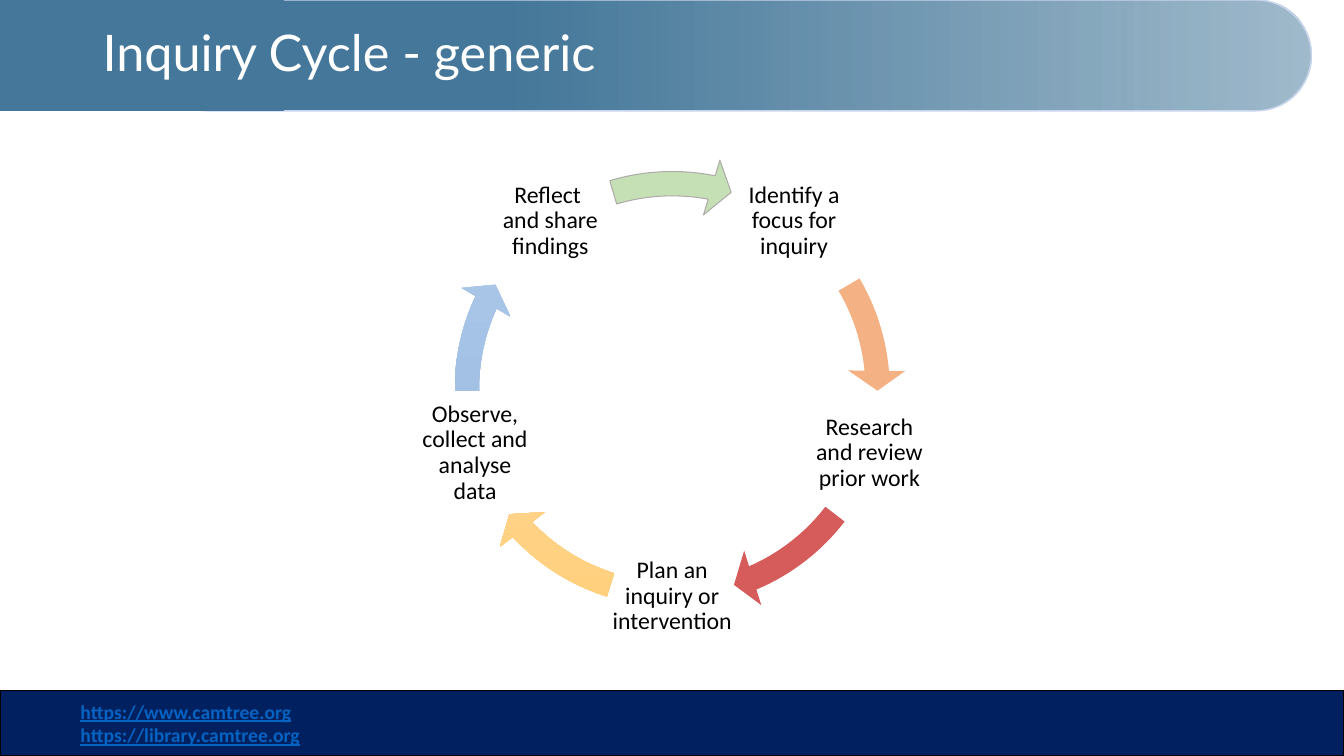
"""Build the generic inquiry cycle slide."""
from dataclasses import dataclass
from math import cos, radians, sin

from lxml.etree import SubElement
from pptx import Presentation
from pptx.dml.color import RGBColor
from pptx.enum.shapes import MSO_SHAPE
from pptx.enum.text import MSO_ANCHOR, PP_ALIGN
from pptx.oxml.ns import qn
from pptx.shapes.autoshape import Shape
from pptx.slide import Slide
from pptx.util import Pt

COLORS = {
    "banner": "447799",
    "banner_edge": "C7D5ED",
    "footer": "002060",
    "link": "0563C1",
    "black": "000000",
    "white": "FFFFFF",
    "orange": "F4B183",
    "red": "C00000",
    "yellow_top": "FFDB9E",
    "yellow_middle": "FFD590",
    "yellow_bottom": "FFD07C",
    "blue_top": "B1CBE9",
    "blue_middle": "A3C1E5",
    "blue_bottom": "93B9E4",
    "green": "C5E0B4",
    "green_edge": "AFABAB",
}
CENTER_X, CENTER_Y = 480.2, 277.9
STEP_RADIUS, STEP_SIZE, RING_SIZE = 148.1, 89.3, 334.1
FIRST_STEP_ANGLE = -54


@dataclass(frozen=True)
class Stop:
    position: int
    color: str
    opacity: int = 100


@dataclass(frozen=True)
class Step:
    label: str
    arrow_start: float
    arrow_end: float
    stops: tuple[Stop, ...]
    edge: str = ""


STEPS = (
    Step("Identify a focus for inquiry", 329.44, 354.88, (Stop(0, "orange"),)),
    Step("Research and review prior work", 37.56, 66.91, (Stop(0, "red", 64),)),
    Step("Plan an inquiry or intervention", 107.49, 136.84,
         (Stop(0, "yellow_top"), Stop(50, "yellow_middle"), Stop(100, "yellow_bottom"))),
    Step("Observe, collect and analyse data", 179.52, 204.96,
         (Stop(0, "blue_top"), Stop(50, "blue_middle"), Stop(100, "blue_bottom"))),
    Step("Reflect \vand share findings", 253.31, 281.09, (Stop(0, "green"),), "green_edge"),
)


def rgb(name: str) -> RGBColor:
    return RGBColor.from_string(COLORS[name])


def add_color(parent, stop: Stop) -> None:
    color = SubElement(parent, qn("a:srgbClr"), val=COLORS[stop.color])
    if stop.opacity < 100:
        SubElement(color, qn("a:alpha"), val=str(stop.opacity * 1000))


def paint(shape: Shape, stops: tuple[Stop, ...], angle: int = 0) -> None:
    if len(stops) == 1:
        shape.fill.solid()
        shape.fill.fore_color.rgb = rgb(stops[0].color)
        solid = shape._element.spPr.find(qn("a:solidFill"))
        solid.clear()
        add_color(solid, stops[0])
        return
    shape.fill.gradient()
    shape.fill.gradient_angle = -angle % 360
    stop_list = shape._element.spPr.find(qn("a:gradFill")).find(qn("a:gsLst"))
    stop_list.clear()
    for stop in stops:
        add_color(SubElement(stop_list, qn("a:gs"), pos=str(stop.position * 1000)), stop)


def add_figure(slide: Slide, preset: MSO_SHAPE, left: float, top: float, width: float,
               height: float, stops: tuple[Stop, ...], edge: str = "",
               edge_width: float = 1, angle: int = 0) -> Shape:
    figure = slide.shapes.add_shape(preset, Pt(left), Pt(top), Pt(width), Pt(height))
    figure.shadow.inherit = False
    paint(figure, stops, angle)
    if edge:
        figure.line.color.rgb = rgb(edge)
        figure.line.width = Pt(edge_width)
    else:
        figure.line.fill.background()
    return figure


def add_text(slide: Slide, lines: tuple[str, ...], left: float, top: float, width: float,
             height: float, size: float, color: str, font: str = "Calibri",
             spacing: float = 1, link: bool = False) -> Shape:
    box = slide.shapes.add_textbox(Pt(left), Pt(top), Pt(width), Pt(height))
    frame = box.text_frame
    frame.word_wrap = True
    frame.text = "\n".join(lines)
    for paragraph in frame.paragraphs:
        paragraph.line_spacing = spacing
        for run in paragraph.runs:
            run.font.name = font
            run.font.size = Pt(size)
            run.font.color.rgb = rgb(color)
            if link:
                run.font.bold = run.font.underline = True
    return box


def add_step(slide: Slide, step: Step, angle: float) -> None:
    left = CENTER_X + STEP_RADIUS * cos(radians(angle)) - STEP_SIZE / 2
    top = CENTER_Y + STEP_RADIUS * sin(radians(angle)) - STEP_SIZE / 2
    label = add_text(slide, (step.label,), left, top, STEP_SIZE, STEP_SIZE,
                     17, "black", spacing=0.9)
    frame = label.text_frame
    frame.vertical_anchor = MSO_ANCHOR.MIDDLE
    frame.margin_left = frame.margin_right = frame.margin_top = frame.margin_bottom = Pt(1.5)
    frame.paragraphs[0].alignment = PP_ALIGN.CENTER

    arrow = add_figure(slide, MSO_SHAPE.CIRCULAR_ARROW, CENTER_X - RING_SIZE / 2,
                       CENTER_Y - RING_SIZE / 2, RING_SIZE, RING_SIZE,
                       step.stops, step.edge, 0.75, 90)
    shape_values = (0.052, 3.36, step.arrow_end * 0.6, step.arrow_start * 0.6, 0.061)
    for index, value in enumerate(shape_values):
        arrow.adjustments[index] = value


def main() -> None:
    deck = Presentation()
    deck.slide_width, deck.slide_height = Pt(960), Pt(540)
    slide = deck.slides.add_slide(deck.slide_layouts[6])

    add_figure(slide, MSO_SHAPE.RECTANGLE, 0, 493.2, 960, 46.8, (Stop(0, "footer"),), "black")
    add_text(slide, ("https://www.camtree.org", "https://library.camtree.org"),
             50.4, 496.1, 240.5, 41, 14, "link", link=True)

    banner = add_figure(slide, MSO_SHAPE.ROUNDED_RECTANGLE, 108.7, 0, 828, 79.2,
                        (Stop(30, "banner"), Stop(100, "banner", 50)), "banner_edge")
    banner.adjustments[0] = 0.5
    add_figure(slide, MSO_SHAPE.RECTANGLE, 0, 0, 202.3, 79.2, (Stop(0, "banner"),), "banner")
    title = add_text(slide, ("Inquiry Cycle - generic",), 66.2, 0, 828, 79.2,
                     36, "white", "Lato", 0.9)
    title.text_frame.vertical_anchor = MSO_ANCHOR.MIDDLE

    for index, step in enumerate(STEPS):
        add_step(slide, step, FIRST_STEP_ANGLE + index * 360 / len(STEPS))

    deck.save("out.pptx")


if __name__ == "__main__":
    main()
